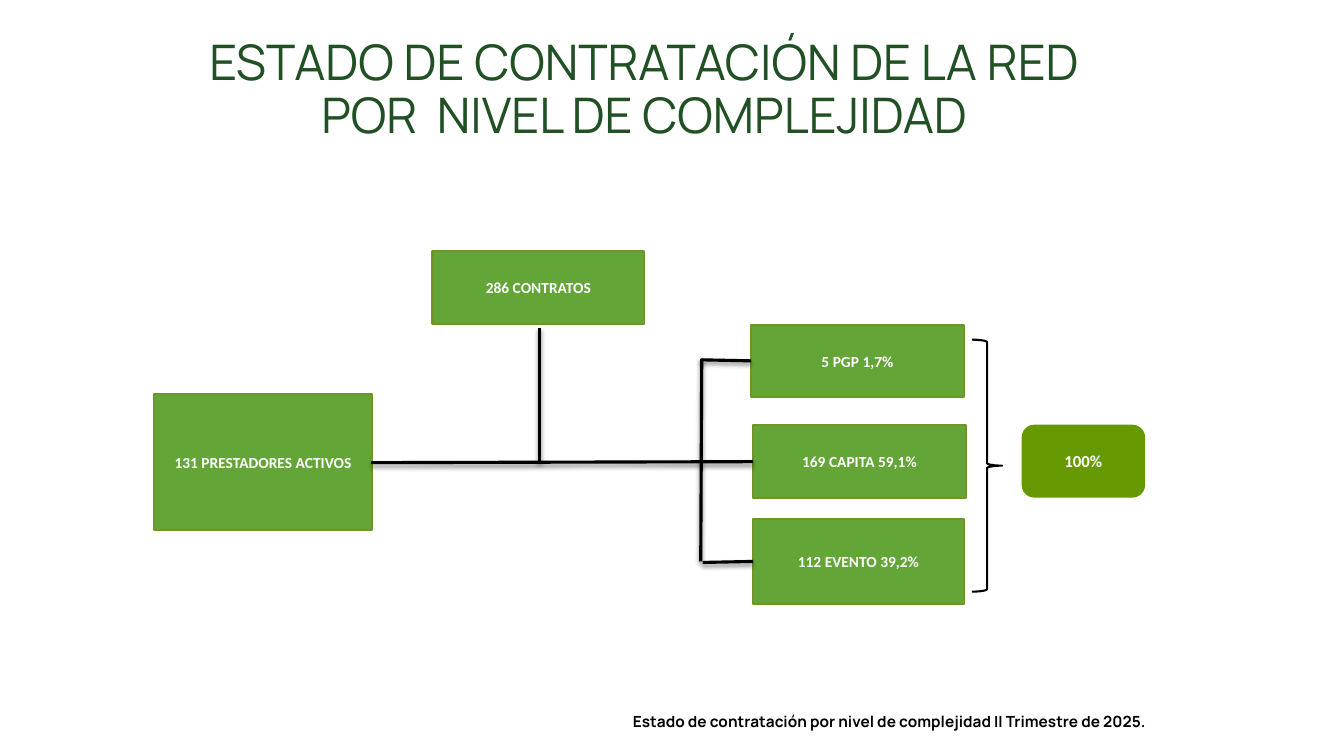
from lxml import etree
from pptx import Presentation
from pptx import util as u
from pptx.dml.color import RGBColor
from pptx.enum import shapes, text
from pptx.oxml import parse_xml
from pptx.oxml.ns import qn

COLORS = {"title": "215025", "node": "63A537", "edge": "6F9428",
          "total": "669900", "white": "FFFFFF", "black": "000000"}
CELL = u.Inches(0.1)
SHADOW = (
    '<a:effectLst xmlns:a="http://schemas.openxmlformats.org/drawingml/2006/main">'
    '<a:outerShdw blurRad="38100" dist="25400" dir="5400000" rotWithShape="0">'
    '<a:srgbClr val="000000"><a:alpha val="45000"/></a:srgbClr>'
    '</a:outerShdw></a:effectLst>'
)

deck = Presentation()
deck.slide_width = u.Inches(13.33)
deck.slide_height = u.Inches(7.5)
page = deck.slides.add_slide(deck.slide_layouts[6])


def grid(*cells):
    return [round(cell * CELL) for cell in cells]


def write(box, words, size, font, color, bold, align):
    frame = box.text_frame
    frame.word_wrap = True
    frame.text = words
    para = frame.paragraphs[0]
    para.alignment = align
    for span in para.runs:
        span.font.size = u.Pt(size)
        span.font.name = font
        span.font.bold = bold
        span.font.color.rgb = RGBColor.from_string(COLORS[color])
    return frame


title = page.shapes.add_textbox(*grid(12.8, 4.4, 103.2, 14.5))
frame = write(title, "ESTADO DE CONTRATACIÓN DE LA RED \vPOR  NIVEL DE COMPLEJIDAD ",
              35, "Manrope", "title", False, text.PP_ALIGN.CENTER)
frame.vertical_anchor = text.MSO_ANCHOR.MIDDLE
frame.margin_top, frame.margin_bottom = grid(0, 5.3)
frame.paragraphs[0].line_spacing = 0.9

RECT = shapes.MSO_SHAPE.RECTANGLE
ROUNDED = shapes.MSO_SHAPE.ROUNDED_RECTANGLE
nodes = [
    ("131 PRESTADORES ACTIVOS", RECT, (15.3, 39.1, 21.6, 13.5), "node", "edge", 1.5, 11),
    ("286 CONTRATOS", RECT, (42.9, 24.9, 21, 7.2), "node", "edge", 1.5, 11),
    ("112 EVENTO 39,2%", RECT, (74.7, 51.5, 20.9, 8.4), "node", "edge", 1.5, 11),
    ("5 PGP 1,7%", RECT, (74.5, 32.2, 21.1, 7.2), "node", "edge", 1.5, 11),
    ("169 CAPITA 59,1%", RECT, (74.7, 42.2, 21.1, 7.2), "node", "edge", 1.5, 11),
    ("100%", ROUNDED, (101.4, 42.2, 12.1, 7.1), "total", "total", 1, 12),
]
for words, kind, place, fill, edge, width, size in nodes:
    box = page.shapes.add_shape(kind, *grid(*place))
    box.shadow.inherit = False
    box.fill.solid()
    box.fill.fore_color.rgb = RGBColor.from_string(COLORS[fill])
    box.line.color.rgb = RGBColor.from_string(COLORS[edge])
    box.line.width = u.Pt(width)
    frame = write(box, words, size, "Calibri", "white", True, text.PP_ALIGN.CENTER)
    frame.vertical_anchor = text.MSO_ANCHOR.MIDDLE

branches = [
    (53.5, 32.5, 53.5, 45.8),
    (74.7, 45.8, 36.8, 45.9),
    (74.5, 35.8, 69.5, 35.7),
    (74.7, 55.7, 69.7, 55.8),
    (69.5, 55.7, 69.6, 35.6),
]
for ends in branches:
    branch = page.shapes.add_connector(shapes.MSO_CONNECTOR.STRAIGHT, *grid(*ends))
    branch.line.color.rgb = RGBColor.from_string(COLORS["black"])
    branch.line.width = u.Pt(2.25)
    branch._element.find(qn("p:spPr")).append(parse_xml(SHADOW))

brace = page.shapes.add_shape(shapes.MSO_SHAPE.RIGHT_BRACE, *grid(96.4, 33.7, 3, 25))
brace.shadow.inherit = False
brace.fill.background()
brace.line.color.rgb = RGBColor.from_string(COLORS["black"])
brace.line.width = u.Pt(1.5)

caption = page.shapes.add_textbox(*grid(49.8, 69.4, 65.5, 3.7))
frame = write(caption, "Estado de contratación por nivel de complejidad II Trimestre de 2025.",
              11, "Manrope", "black", True, text.PP_ALIGN.RIGHT)
frame.margin_top, frame.margin_right = grid(1.2, 1.6)

deck.save("out.pptx")
